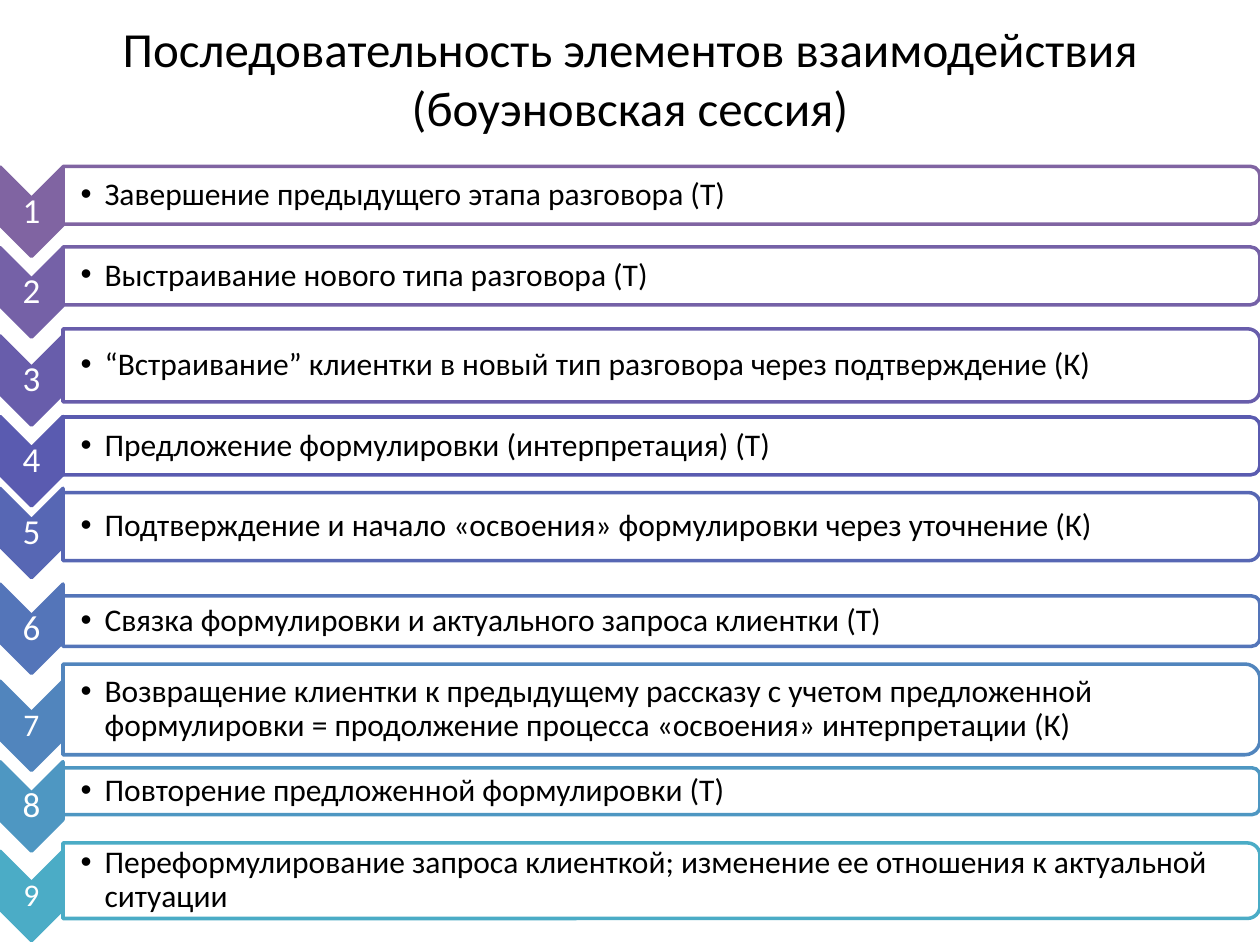
from dataclasses import dataclass

from lxml.etree import SubElement
from pptx import Presentation
from pptx.dml.color import RGBColor
from pptx.enum.shapes import MSO_SHAPE as SHAPE
from pptx.enum.text import MSO_ANCHOR as ANCHOR, MSO_AUTO_SIZE as AUTOSIZE, PP_ALIGN as ALIGN
from pptx.oxml.ns import qn
from pptx.util import Pt

PX = 9144


@dataclass(frozen=True)
class Theme:
    font: str = "Calibri"
    dark: str = "000000"
    light: str = "FFFFFF"
    steps: tuple = ("8064A2", "7561A7", "685DAB", "5A5BB0", "5767B4",
                    "5475B9", "5185BD", "4E97C2", "4BACC6")
    title_size: int = 28
    number_size: int = 20
    small_number_size: int = 18
    body_size: int = 18
    line_width: int = 2


THEME = Theme()
SLIDE_W, SLIDE_H = 1000, 750
TITLE_H = 123
CHEVRON_W, CHEVRON_H = 50, 71
NUMBER_H = 21
BAR_PAD = 2
INDENT = 19

STEPS = [
    (168, 155, 46, THEME.number_size, "Завершение предыдущего этапа разговора (Т)"),
    (232, 219, 46, THEME.number_size, "Выстраивание нового типа разговора (Т)"),
    (302, 290, 58, THEME.number_size,
     "“Встраивание” клиентки в новый тип разговора через подтверждение (К)"),
    (366, 354, 46, THEME.number_size, "Предложение формулировки (интерпретация) (Т)"),
    (423, 418, 54, THEME.number_size,
     "Подтверждение и начало «освоения» формулировки через уточнение (К)"),
    (499, 493, 40, THEME.number_size, "Связка формулировки и актуального запроса клиентки (Т)"),
    (576, 563, 72, THEME.small_number_size,
     "Возвращение клиентки к предыдущему рассказу с учетом предложенной "
     "формулировки = продолжение процесса «освоения» интерпретации (К)"),
    (640, 628, 37, THEME.number_size, "Повторение предложенной формулировки (Т)"),
    (711, 699, 60, THEME.small_number_size,
     "Переформулирование запроса клиенткой; изменение ее отношения к актуальной ситуации"),
]


def emu(*lengths):
    return [round(n * PX) for n in lengths]


def set_attrs(obj, values):
    for name, value in values.items():
        setattr(obj, name, value)


def write(tf, text, size, color, align):
    set_attrs(tf, {"word_wrap": True, "auto_size": AUTOSIZE.NONE,
                   "vertical_anchor": ANCHOR.MIDDLE})
    p = tf.paragraphs[0]
    p.alignment = align
    r = p.add_run()
    r.text = text
    set_attrs(r.font, {"name": THEME.font, "size": Pt(size)})
    r.font.color.rgb = RGBColor.from_string(color)
    return p


def add_text(slide, box, text, size, color, align, left_inset=1):
    tf = slide.shapes.add_textbox(*emu(*box)).text_frame
    margins = {f"margin_{side}": PX for side in ("top", "right", "bottom")}
    set_attrs(tf, margins | {"margin_left": left_inset * PX})
    p = write(tf, text, size, color, align)
    p.line_spacing = 0.9
    return p


def add_turned(slide, kind, box, fill, line):
    x, y, w, h = box
    sp = slide.shapes.add_shape(kind, *emu(x + (w - h) / 2, y + (h - w) / 2, h, w))
    sp.rotation = 90
    sp.shadow.inherit = False
    sp.fill.solid()
    sp.fill.fore_color.rgb = RGBColor.from_string(fill)
    sp.line.color.rgb = RGBColor.from_string(line)
    sp.line.width = Pt(THEME.line_width)
    return sp


def add_bullet(p):
    pPr = p._p.get_or_add_pPr()
    pPr.set("marL", str(INDENT * PX))
    pPr.set("indent", str(-INDENT * PX))
    SubElement(pPr, qn("a:buFont"), typeface="Arial")
    SubElement(pPr, qn("a:buChar"), char="•")


def add_title(slide, box, text):
    sp = slide.shapes.title
    set_attrs(sp, dict(zip(("left", "top", "width", "height"), emu(*box))))
    write(sp.text_frame, text, THEME.title_size, THEME.dark, ALIGN.CENTER)


def add_marker(slide, box, number, size, color):
    x, y, w, h = box
    add_turned(slide, SHAPE.CHEVRON, box, color, color)
    add_text(slide, (x, y + (h - NUMBER_H) / 2, w, NUMBER_H), str(number),
             size, THEME.light, ALIGN.CENTER)


def add_bar(slide, box, text, color):
    x, y, w, h = box
    sp = add_turned(slide, SHAPE.ROUND_2_SAME_RECTANGLE, box, THEME.light, color)
    rgb = sp._element.spPr.find(qn("a:solidFill")).find(qn("a:srgbClr"))
    SubElement(rgb, qn("a:alpha"), val="90000")
    p = add_text(slide, (x, y + BAR_PAD, w - BAR_PAD, h - 2 * BAR_PAD), text,
                 THEME.body_size, THEME.dark, ALIGN.LEFT, left_inset=14)
    add_bullet(p)


def add_steps(slide, box):
    x, y, w, h = box
    for i, (marker_mid, bar_mid, bar_h, size, text) in enumerate(STEPS):
        color = THEME.steps[i]
        marker_y = y + marker_mid - TITLE_H - CHEVRON_H / 2
        bar_y = y + bar_mid - TITLE_H - bar_h / 2
        add_marker(slide, (x, marker_y, CHEVRON_W, CHEVRON_H), i + 1, size, color)
        add_bar(slide, (x + CHEVRON_W, bar_y, w - CHEVRON_W, bar_h), text, color)


def main():
    prs = Presentation()
    prs.slide_width, prs.slide_height = emu(SLIDE_W, SLIDE_H)
    slide = prs.slides.add_slide(prs.slide_layouts[5])
    add_title(slide, (0, 0, SLIDE_W, TITLE_H),
              "Последовательность элементов взаимодействия (боуэновская сессия)")
    add_steps(slide, (0, TITLE_H, SLIDE_W, SLIDE_H - TITLE_H))
    prs.save("out.pptx")


if __name__ == "__main__":
    main()
